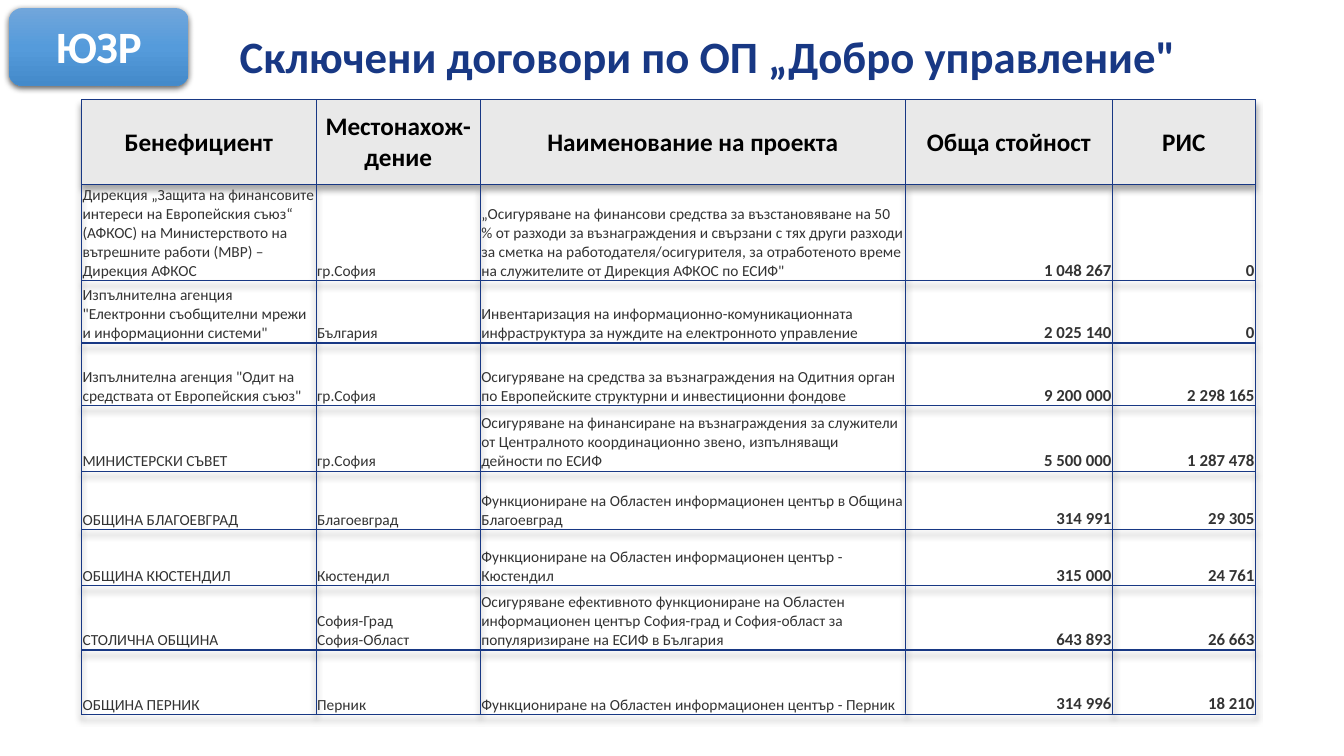
from copy import deepcopy
from dataclasses import dataclass

from pptx import Presentation
from pptx.dml.color import RGBColor
from pptx.enum.shapes import MSO_SHAPE
from pptx.enum.text import MSO_ANCHOR, MSO_AUTO_SIZE, PP_ALIGN
from pptx.oxml import parse_xml
from pptx.oxml.ns import nsdecls, qn
from pptx.util import Pt

ROUNDED = MSO_SHAPE.ROUNDED_RECTANGLE
MIDDLE, BOTTOM = MSO_ANCHOR.MIDDLE, MSO_ANCHOR.BOTTOM
LEFT, CENTER, RIGHT = PP_ALIGN.LEFT, PP_ALIGN.CENTER, PP_ALIGN.RIGHT
NO_AUTOSIZE = MSO_AUTO_SIZE.NONE
TITLE_ONLY = 5
PLAIN_TABLE_STYLE = "{2D5ABB26-0587-4C30-8999-92F81FD0307C}"


@dataclass(frozen=True)
class Theme:
    font: str = "Calibri"
    navy: str = "183884"
    white: str = "FFFFFF"
    black: str = "000000"
    ink: str = "333333"
    header_fill: str = "E9E9E9"
    badge_fill: tuple = ("71A6DB", "559BDB", "448ACA")
    title_size: float = 32
    header_size: float = 18
    amount_size: float = 12
    body_size: float = 11


THEME = Theme()

COLUMNS = [
    ("Бенефициент", 167.5),
    ("Местонахож-дение", 117.3),
    ("Наименование на проекта", 303.6),
    ("Обща стойност", 147.8),
    ("РИС", 102.2),
]
HEADER_HEIGHT = 60.5
CONTRACTS = [
    (67, "Дирекция „Защита на финансовите интереси на Европейския съюз“ (АФКОС) на "
         "Министерството на вътрешните работи (МВР) – Дирекция АФКОС",
     "гр.София",
     "„Осигуряване на финансови средства за възстановяване на 50 % от разходи за "
     "възнаграждения и свързани с тях други разходи за сметка на "
     "работодателя/осигурителя, за отработеното време на служителите от Дирекция "
     "АФКОС по ЕСИФ\"",
     "1 048 267", "0"),
    (44.7, "Изпълнителна агенция \"Електронни съобщителни мрежи и информационни системи\"",
     "България",
     "Инвентаризация на информационно-комуникационната инфраструктура за нуждите на "
     "електронното управление",
     "2 025 140", "0"),
    (44.7, "Изпълнителна агенция \"Одит на средствата от Европейския съюз\"",
     "гр.София",
     "Осигуряване на средства за възнаграждения на Одитния орган по Европейските "
     "структурни и инвестиционни фондове",
     "9 200 000", "2 298 165"),
    (46.8, "МИНИСТЕРСКИ СЪВЕТ", "гр.София",
     "Осигуряване на финансиране на възнаграждения за служители от Централното "
     "координационно звено, изпълняващи дейности по ЕСИФ",
     "5 500 000", "1 287 478"),
    (41.5, "ОБЩИНА БЛАГОЕВГРАД", "Благоевград",
     "Функциониране на Областен информационен център в Община Благоевград",
     "314 991", "29 305"),
    (40.4, "ОБЩИНА КЮСТЕНДИЛ", "Кюстендил",
     "Функциониране на Областен информационен център - Кюстендил",
     "315 000", "24 761"),
    (45.9, "СТОЛИЧНА ОБЩИНА", "София-Град\nСофия-Област",
     "Осигуряване ефективното функциониране на Областен информационен център "
     "София-град и София-област за популяризиране на ЕСИФ в България",
     "643 893", "26 663"),
    (45.9, "ОБЩИНА ПЕРНИК", "Перник",
     "Функциониране на Областен информационен център - Перник",
     "314 996", "18 210"),
]


def write(frame, text, size, color, bold, align):
    frame.text = text
    for para in frame.paragraphs:
        para.alignment = align
        for span in para.runs:
            span.font.name = THEME.font
            span.font.size = Pt(size)
            span.font.bold = bold
            span.font.color.rgb = RGBColor.from_string(color)


def shadow_effect(blur, distance, opacity):
    return parse_xml(
        f'<a:effectLst {nsdecls("a")}>'
        f'<a:outerShdw blurRad="{Pt(blur)}" dist="{Pt(distance)}" dir="5400000" '
        f'algn="t" rotWithShape="0"><a:srgbClr val="{THEME.black}">'
        f'<a:alpha val="{opacity * 1000}"/></a:srgbClr></a:outerShdw></a:effectLst>'
    )


def border_cell(cell):
    properties = cell._tc.get_or_add_tcPr()
    for position, side in enumerate(("lnL", "lnR", "lnT", "lnB")):
        properties.insert(position, parse_xml(
            f'<a:{side} {nsdecls("a")} w="{Pt(1)}"><a:solidFill>'
            f'<a:srgbClr val="{THEME.navy}"/></a:solidFill></a:{side}>'
        ))


def place_title(page, left, top, width, height):
    title = page.shapes.title
    title.left, title.top, title.width, title.height = map(Pt, (left, top, width, height))
    frame = title.text_frame
    write(frame, "Сключени договори по ОП „Добро управление\"",
          THEME.title_size, THEME.navy, True, CENTER)
    frame.auto_size = NO_AUTOSIZE
    frame.word_wrap = True
    frame.vertical_anchor = MIDDLE


def place_badge(page, left, top, width, height):
    badge = page.shapes.add_shape(ROUNDED, *map(Pt, (left, top, width, height)))
    badge.line.fill.background()
    badge.fill.gradient()
    badge.fill.gradient_angle = 270
    stops = badge._element.spPr.find(".//" + qn("a:gsLst"))
    stops.insert(1, deepcopy(stops[0]))
    for index, (stop, color) in enumerate(zip(badge.fill.gradient_stops, THEME.badge_fill)):
        stop.position = index / 2
        stop.color.rgb = RGBColor.from_string(color)
    badge._element.spPr.append(shadow_effect(4.5, 1.5, 63))
    frame = badge.text_frame
    write(frame, "ЮЗР", THEME.title_size, THEME.white, True, CENTER)
    frame.vertical_anchor = MIDDLE
    frame.margin_bottom = Pt(6)


def fill_header(cell, text):
    write(cell.text_frame, text, THEME.header_size, THEME.black, True, CENTER)
    cell.vertical_anchor = MIDDLE
    cell.fill.solid()
    cell.fill.fore_color.rgb = RGBColor.from_string(THEME.header_fill)


def fill_body(cell, text, is_amount):
    size = THEME.amount_size if is_amount else THEME.body_size
    write(cell.text_frame, text, size, THEME.ink, is_amount, RIGHT if is_amount else LEFT)
    cell.vertical_anchor = BOTTOM
    cell.fill.background()


def place_contracts(page, left, top):
    heights = [HEADER_HEIGHT] + [contract[0] for contract in CONTRACTS]
    widths = [width for _, width in COLUMNS]
    frame = page.shapes.add_table(len(heights), len(widths), Pt(left), Pt(top),
                                  Pt(sum(widths)), Pt(sum(heights)))
    table = frame.table
    table.horz_banding = False
    properties = table._tbl.tblPr
    properties.find(qn("a:tableStyleId")).text = PLAIN_TABLE_STYLE
    properties.insert(0, shadow_effect(4, 4, 35))
    for column, width in zip(table.columns, widths):
        column.width = Pt(width)
    for row, height in zip(table.rows, heights):
        row.height = Pt(height)

    lines = [[name for name, _ in COLUMNS]] + [contract[1:] for contract in CONTRACTS]
    for row_index, line in enumerate(lines):
        for column_index, text in enumerate(line):
            cell = table.cell(row_index, column_index)
            cell.margin_left = cell.margin_right = cell.margin_top = Pt(0.7)
            cell.margin_bottom = Pt(0)
            if row_index == 0:
                fill_header(cell, text)
            else:
                fill_body(cell, text, column_index >= 3)
            border_cell(cell)


def main():
    deck = Presentation()
    deck.slide_width, deck.slide_height = Pt(960), Pt(540)
    page = deck.slides.add_slide(deck.slide_layouts[TITLE_ONLY])
    place_title(page, 136.8, 16.6, 738, 46)
    place_contracts(page, 58.3, 71.3)
    place_badge(page, 6.5, 5.8, 128.2, 55.4)
    deck.save("out.pptx")


if __name__ == "__main__":
    main()
